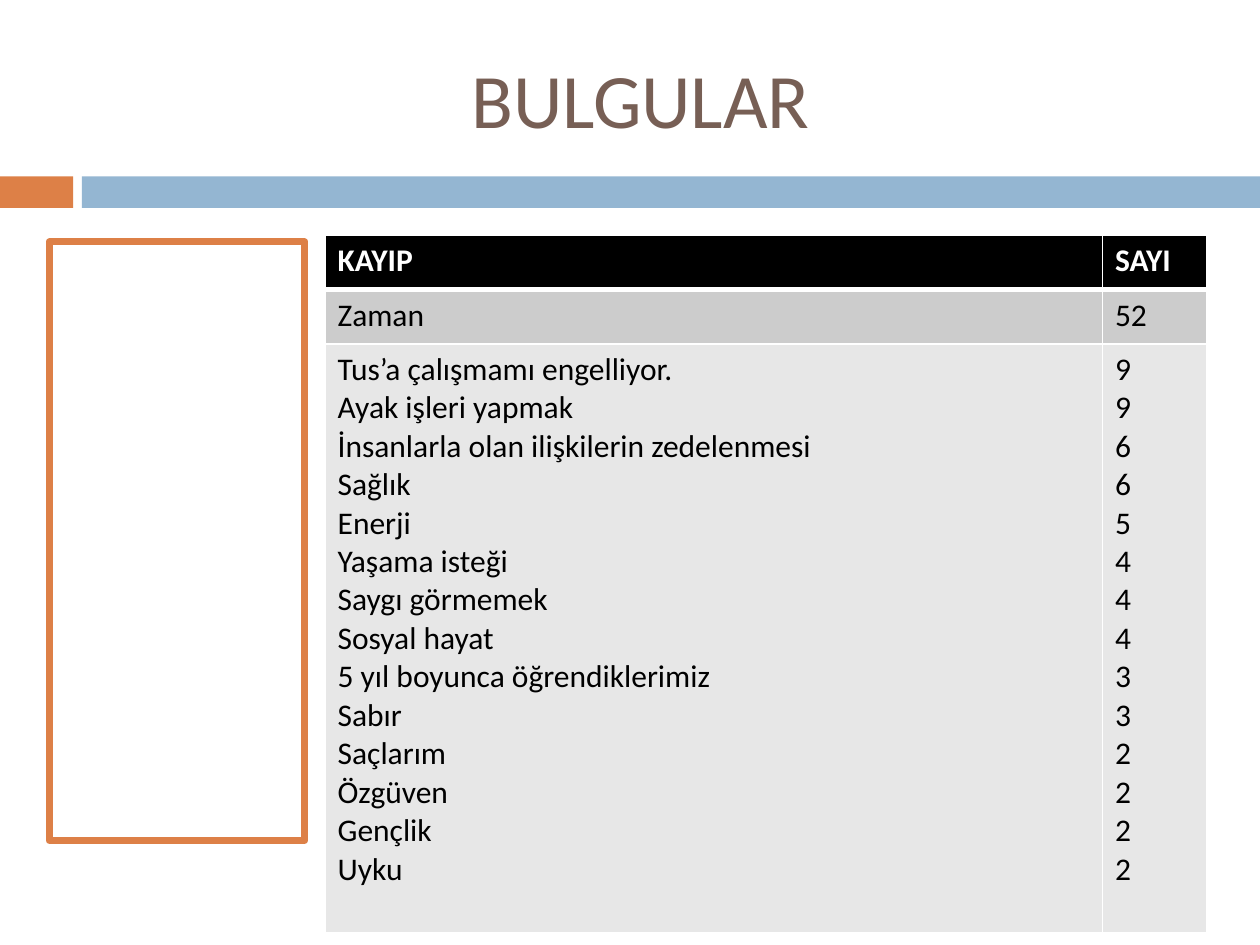
"""Builds the BULGULAR slide with its table of losses."""
from lxml import etree
from pptx import Presentation
from pptx.dml.color import RGBColor
from pptx.enum.shapes import MSO_SHAPE
from pptx.enum.text import MSO_ANCHOR, PP_ALIGN
from pptx.oxml.ns import qn
from pptx.util import Inches, Pt

RECTANGLE = MSO_SHAPE.RECTANGLE
MIDDLE = MSO_ANCHOR.MIDDLE
CENTER = PP_ALIGN.CENTER

COLORS = {
    "orange": "DD8047",
    "blue": "94B6D2",
    "brown": "775F55",
    "white": "FFFFFF",
    "black": "000000",
    "gray": "CCCCCC",
    "light_gray": "E7E7E7",
}
FORMATS = {
    "title": {"name": "Calibri", "size": Pt(44), "bold": False},
    "header": {"name": "Calibri", "size": Pt(18), "bold": True},
    "body": {"name": "Calibri", "size": Pt(18), "bold": False},
}
LOSSES = [
    ("Tus’a çalışmamı engelliyor.", "9"),
    ("Ayak işleri yapmak", "9"),
    ("İnsanlarla olan ilişkilerin zedelenmesi", "6"),
    ("Sağlık", "6"),
    ("Enerji", "5"),
    ("Yaşama isteği", "4"),
    ("Saygı görmemek", "4"),
    ("Sosyal hayat", "4"),
    ("5 yıl boyunca öğrendiklerimiz", "3"),
    ("Sabır", "3"),
    ("Saçlarım", "2"),
    ("Özgüven", "2"),
    ("Gençlik", "2"),
    ("Uyku", "2"),
]
ROWS = [
    (0.43, "black", "white", "header", [("KAYIP", "SAYI")]),
    (0.43, "gray", "black", "body", [("Zaman", "52")]),
    (4.67, "light_gray", "black", "body", LOSSES),
]
RECTANGLES = [
    (0, 1.4, 0.58, 0.25, "orange", None),
    (0.65, 1.4, 9.35, 0.25, "blue", None),
    (0.39, 1.92, 2.03, 4.75, "white", "orange"),
]


def write_lines(text_frame, lines, format_name, color):
    text_frame.text = "\n".join(lines)
    for paragraph in text_frame.paragraphs:
        font = paragraph.runs[0].font
        for attribute, value in FORMATS[format_name].items():
            setattr(font, attribute, value)
        font.color.rgb = RGBColor.from_string(COLORS[color])


def add_border(cell, side, width):
    properties = cell._tc.get_or_add_tcPr()
    line = etree.SubElement(properties, qn(f"a:ln{side}"), w=str(Pt(width)))
    fill = etree.SubElement(line, qn("a:solidFill"))
    etree.SubElement(fill, qn("a:srgbClr"), val=COLORS["white"])


presentation = Presentation()
presentation.slide_width = Inches(10)
presentation.slide_height = Inches(7.5)
slide = presentation.slides.add_slide(presentation.slide_layouts[6])

for left, top, width, height, fill, outline in RECTANGLES:
    shape = slide.shapes.add_shape(
        RECTANGLE, Inches(left), Inches(top), Inches(width), Inches(height)
    )
    shape.shadow.inherit = False
    shape.fill.solid()
    shape.fill.fore_color.rgb = RGBColor.from_string(COLORS[fill])
    if outline:
        shape.line.color.rgb = RGBColor.from_string(COLORS[outline])
        shape.line.width = Pt(4)
    else:
        shape.line.fill.background()

title = slide.shapes.add_textbox(Inches(0.67), Inches(0.3), Inches(8.83), Inches(0.95))
title.text_frame.word_wrap = True
title.text_frame.vertical_anchor = MIDDLE
write_lines(title.text_frame, ["BULGULAR"], "title", "brown")
title.text_frame.paragraphs[0].alignment = CENTER

table_height = sum(row[0] for row in ROWS)
table = slide.shapes.add_table(
    len(ROWS), 2, Inches(2.58), Inches(1.87), Inches(7), Inches(table_height)
).table
for column, width in zip(table.columns, (6.17, 0.83)):
    column.width = Inches(width)

for row_index, (height, fill, color, format_name, entries) in enumerate(ROWS):
    table.rows[row_index].height = Inches(height)
    top_width = 3 if row_index == 1 else 1
    bottom_width = 3 if row_index == 0 else 1
    for column_index, lines in enumerate(zip(*entries)):
        cell = table.cell(row_index, column_index)
        for side, width in zip("LRTB", (1, 1, top_width, bottom_width)):
            add_border(cell, side, width)
        cell.fill.solid()
        cell.fill.fore_color.rgb = RGBColor.from_string(COLORS[fill])
        write_lines(cell.text_frame, lines, format_name, color)

presentation.save("out.pptx")
